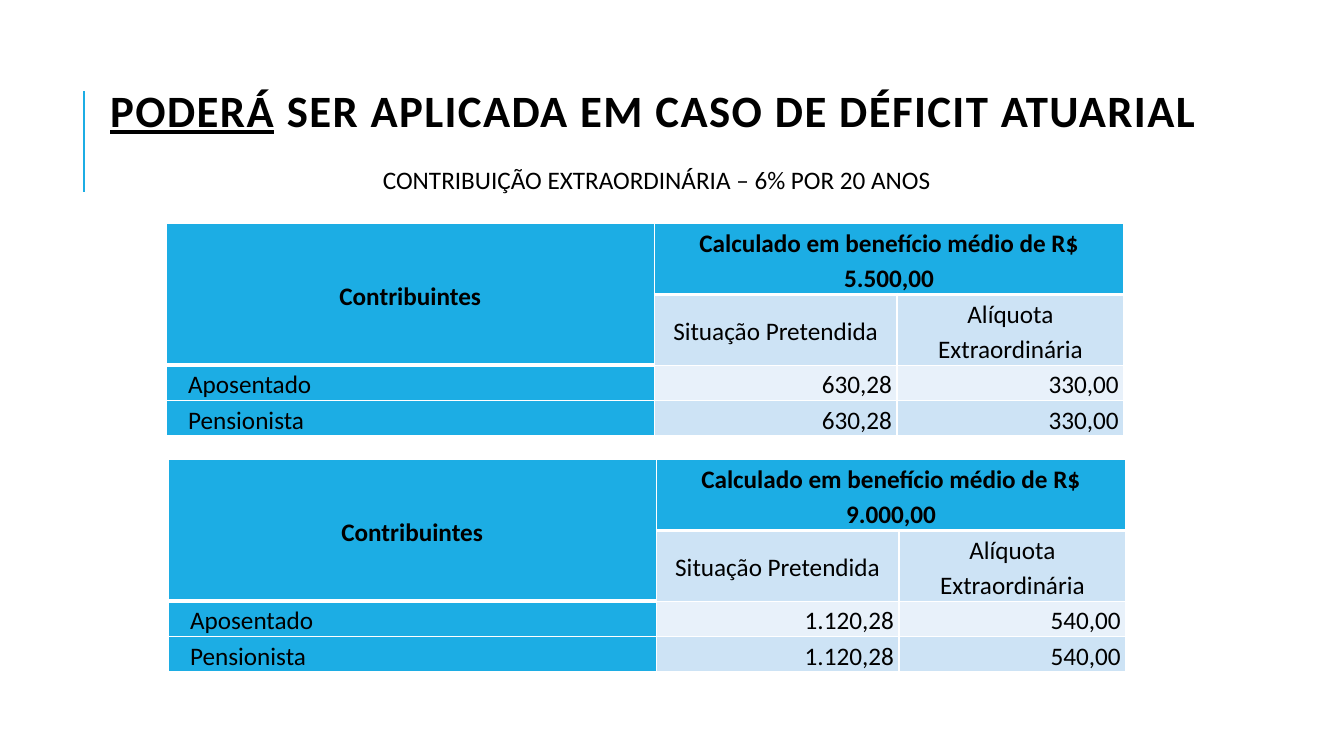
from lxml import etree
from pptx import Presentation
from pptx.dml.color import RGBColor
from pptx.enum import shapes, text
from pptx.oxml import ns
from pptx.util import Pt

BLUE = RGBColor(0x1C, 0xAD, 0xE4)
BAND = RGBColor(0xCD, 0xE3, 0xF5)
LIGHT_BAND = RGBColor(0xE8, 0xF1, 0xFA)
BLACK = RGBColor(0, 0, 0)
WHITE = RGBColor(0xFF, 0xFF, 0xFF)

LEFT, CENTER, RIGHT = text.PP_ALIGN.LEFT, text.PP_ALIGN.CENTER, text.PP_ALIGN.RIGHT
MIDDLE, BOTTOM = text.MSO_ANCHOR.MIDDLE, text.MSO_ANCHOR.BOTTOM

COLUMN_WIDTHS = (348.5, 173.5, 162)
ROW_HEIGHTS = (47.5, 47.5, 23, 23.5)


def apply(target, formats):
    for name, value in formats.items():
        setattr(target, name, value)


def add_run(paragraph, words, size=18, **formats):
    run = paragraph.add_run()
    run.text = words
    apply(run.font, {"name": "Calibri", "size": Pt(size), **formats})
    run.font.color.rgb = BLACK
    return run


def add_title(slide):
    title = slide.shapes.title
    apply(title, {"left": Pt(70.6), "top": Pt(49.7), "width": Pt(792), "height": Pt(64)})
    apply(title.text_frame, {
        "word_wrap": True, "auto_size": text.MSO_AUTO_SIZE.NONE,
        "vertical_anchor": MIDDLE, "margin_left": 0, "margin_right": 0,
    })
    paragraph = title.text_frame.paragraphs[0]
    apply(paragraph, {"alignment": CENTER, "line_spacing": 0.8})
    for words, underline in (("PODERÁ", True),
                             (" SER APLICADA EM CASO DE DÉFICIT ATUARIAL", False)):
        run = add_run(paragraph, words, 32, bold=True, underline=underline)
        run.font._element.set("spc", "100")


def add_accent_line(slide):
    line = slide.shapes.add_connector(
        shapes.MSO_CONNECTOR.STRAIGHT, Pt(60), Pt(137), Pt(60), Pt(65))
    line.line.color.rgb = BLUE
    line.line.width = Pt(1.5)
    etree.SubElement(line._element.spPr, ns.qn("a:effectLst"))


def add_subtitle(slide):
    box = slide.shapes.add_textbox(Pt(266.4), Pt(113.8), Pt(425.5), Pt(29))
    apply(box.text_frame, {"word_wrap": False,
                           "auto_size": text.MSO_AUTO_SIZE.SHAPE_TO_FIT_TEXT})
    add_run(box.text_frame.paragraphs[0], "CONTRIBUIÇÃO EXTRAORDINÁRIA – 6% POR 20 ANOS")


def set_borders(cell, bottom):
    properties = cell._tc.get_or_add_tcPr()
    widths = {"lnL": 1, "lnR": 1, "lnT": 1, "lnB": bottom}
    for position, (tag, width) in enumerate(widths.items()):
        line = etree.Element(ns.qn(f"a:{tag}"), w=str(Pt(width)))
        fill = etree.SubElement(line, ns.qn("a:solidFill"))
        etree.SubElement(fill, ns.qn("a:srgbClr"), val=str(WHITE))
        properties.insert(position, line)


def fill_cell(cell, words, color, alignment=CENTER, anchor=MIDDLE, bold=False, indent=0):
    cell.fill.solid()
    cell.fill.fore_color.rgb = color
    apply(cell, {"vertical_anchor": anchor, "margin_left": Pt(3.6),
                 "margin_right": Pt(3.6), "margin_top": 0, "margin_bottom": 0})
    paragraph = cell.text_frame.paragraphs[0]
    apply(paragraph, {"alignment": alignment, "line_spacing": 1.15})
    if indent:
        paragraph._p.get_or_add_pPr().set("indent", str(Pt(indent)))
    add_run(paragraph, words, bold=bold)


def add_contribution_table(slide, left, top, benefit, current, extra):
    table = slide.shapes.add_table(
        len(ROW_HEIGHTS), len(COLUMN_WIDTHS), Pt(left), Pt(top),
        Pt(sum(COLUMN_WIDTHS)), Pt(sum(ROW_HEIGHTS))).table
    apply(table, {"first_row": False, "horz_banding": False})
    for column, width in zip(table.columns, COLUMN_WIDTHS):
        column.width = Pt(width)
    for row, height in zip(table.rows, ROW_HEIGHTS):
        row.height = Pt(height)

    # Headings
    table.cell(0, 0).merge(table.cell(1, 0))
    table.cell(0, 1).merge(table.cell(0, 2))
    fill_cell(table.cell(0, 0), "Contribuintes", BLUE, bold=True)
    fill_cell(table.cell(0, 1), f"Calculado em benefício médio de R$ {benefit}", BLUE, bold=True)
    fill_cell(table.cell(1, 1), "Situação Pretendida", BAND)
    fill_cell(table.cell(1, 2), "Alíquota Extraordinária", BAND)

    # Contributors
    for row, (name, color) in enumerate((("Aposentado", LIGHT_BAND), ("Pensionista", BAND)), 2):
        fill_cell(table.cell(row, 0), name, BLUE, LEFT, indent=12)
        for column, amount in enumerate((current, extra), 1):
            fill_cell(table.cell(row, column), amount, color, RIGHT, BOTTOM)

    # Borders, heavier below the headings
    for row in range(len(ROW_HEIGHTS)):
        for column in range(len(COLUMN_WIDTHS)):
            heavy = row == 0 or (row, column) == (1, 0)
            set_borders(table.cell(row, column), 3 if heavy else 1)


def main():
    presentation = Presentation()
    apply(presentation, {"slide_width": Pt(960), "slide_height": Pt(540)})
    slide = presentation.slides.add_slide(presentation.slide_layouts[5])
    slide.background.fill.solid()
    slide.background.fill.fore_color.rgb = WHITE

    add_accent_line(slide)
    add_title(slide)
    add_contribution_table(slide, 118.8, 159.8, "5.500,00", "630,28", "330,00")
    add_contribution_table(slide, 120.2, 328.3, "9.000,00", "1.120,28", "540,00")
    add_subtitle(slide)
    presentation.save("out.pptx")


if __name__ == "__main__":
    main()
